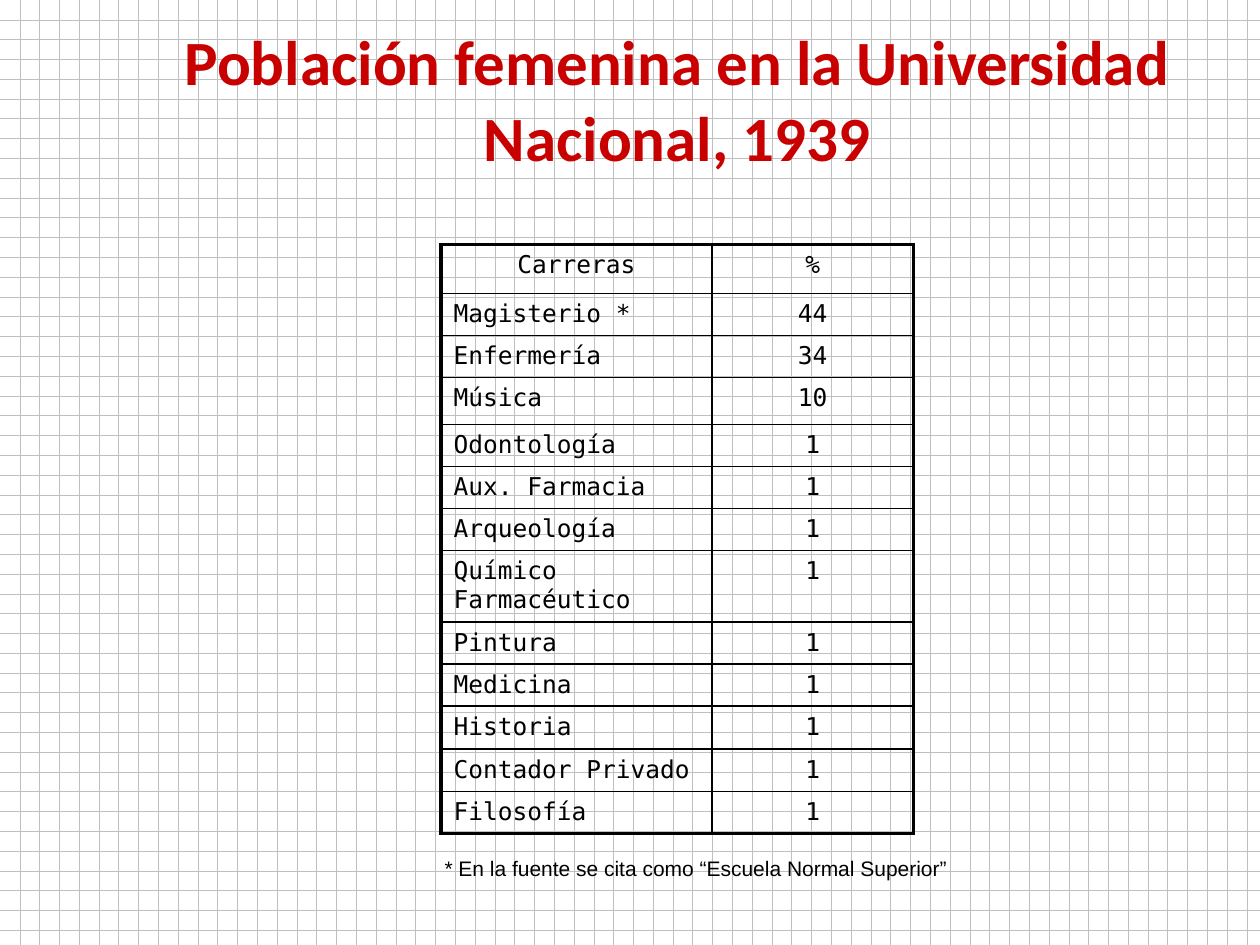
from lxml.etree import SubElement
from pptx import Presentation
from pptx.dml.color import RGBColor
from pptx.enum.dml import MSO_PATTERN
from pptx.enum.text import MSO_ANCHOR, PP_ALIGN
from pptx.oxml.ns import qn
from pptx.util import Inches, Pt

COLORS = {"title": "C90000", "ink": "000000", "grid": "BFBFBF", "paper": "FFFFFF"}
TITLE = {"name": "Calibri", "size": Pt(36), "bold": True}
BODY = {"name": "DejaVu Sans Mono", "size": Pt(14)}
NOTE = {"name": "Arial", "size": Pt(12)}
THICK, THIN = 2.25, 1
COLUMN_WIDTHS = (2.15, 1.6)
ROWS = (
    ("Carreras", "%", 0.39),
    ("Magisterio *", "44", 0.33),
    ("Enfermería", "34", 0.31),
    ("Música", "10", 0.37),
    ("Odontología", "1", 0.33),
    ("Aux. Farmacia", "1", 0.33),
    ("Arqueología", "1", 0.33),
    ("Químico Farmacéutico", "1", 0.33),
    ("Pintura", "1", 0.33),
    ("Medicina", "1", 0.33),
    ("Historia", "1", 0.34),
    ("Contador Privado", "1", 0.34),
    ("Filosofía", "1", 0.33),
)


def rgb(key):
    """Return the named colour."""
    return RGBColor.from_string(COLORS[key])


def set_background(s):
    """Cover the slide with a dotted grid pattern."""
    fill = s.background.fill
    fill.patterned()
    fill.pattern = MSO_PATTERN.DOTTED_GRID
    fill.fore_color.rgb = rgb("grid")
    fill.back_color.rgb = rgb("paper")


def write(tf, text, style, color, align):
    """Write one formatted paragraph into a text frame."""
    p = tf.paragraphs[0]
    p.alignment = align
    r = p.add_run()
    r.text = text
    for name, value in style.items():
        setattr(r.font, name, value)
    r.font.color.rgb = rgb(color)


def add_text(s, box, text, style, color, align, wrap):
    """Add a text box at left, top, width, height in inches."""
    sp = s.shapes.add_textbox(*map(Inches, box))
    tf = sp.text_frame
    tf.word_wrap = wrap
    tf.vertical_anchor = MSO_ANCHOR.TOP
    write(tf, text, style, color, align)


def set_borders(cell, widths):
    """Draw the cell borders with the given point widths by side."""
    tc_pr = cell._tc.get_or_add_tcPr()
    for side, width in widths.items():
        ln = SubElement(tc_pr, qn(f"a:ln{side}"), w=str(Pt(width)))
        fill = SubElement(ln, qn("a:solidFill"))
        SubElement(fill, qn("a:srgbClr"), val=COLORS["ink"])


def add_careers_table(s):
    """Add the table of careers with a thick outer frame."""
    size = sum(COLUMN_WIDTHS), sum(row[2] for row in ROWS)
    frame = s.shapes.add_table(len(ROWS), 2, *map(Inches, (3.5, 1.94, *size)))
    table = frame.table
    table.first_row = table.horz_banding = False
    for column, width in zip(table.columns, COLUMN_WIDTHS):
        column.width = Inches(width)
    last = len(ROWS) - 1
    for i, (career, percent, height) in enumerate(ROWS):
        table.rows[i].height = Inches(height)
        for j, text in enumerate((career, percent)):
            cell = table.cell(i, j)
            align = PP_ALIGN.CENTER if i == 0 or j == 1 else PP_ALIGN.LEFT
            write(cell.text_frame, text, BODY, "ink", align)
            outer = {"L": j == 0, "R": j == 1, "T": i == 0, "B": i == last}
            set_borders(cell, {k: THICK if v else THIN for k, v in outer.items()})
            cell.fill.background()


def main():
    """Build the slide and save it."""
    prs = Presentation()
    prs.slide_width, prs.slide_height = Inches(10), Inches(7.5)
    s = prs.slides.add_slide(prs.slide_layouts[6])
    set_background(s)
    add_text(s, (0.75, 0.13, 9.25, 1.5), "Población femenina en la Universidad Nacional, 1939",
             TITLE, "title", PP_ALIGN.CENTER, True)
    add_careers_table(s)
    add_text(s, (3.43, 6.74, 4.23, 0.3), "* En la fuente se cita como “Escuela Normal Superior”",
             NOTE, "ink", PP_ALIGN.LEFT, False)
    prs.save("out.pptx")


if __name__ == "__main__":
    main()
